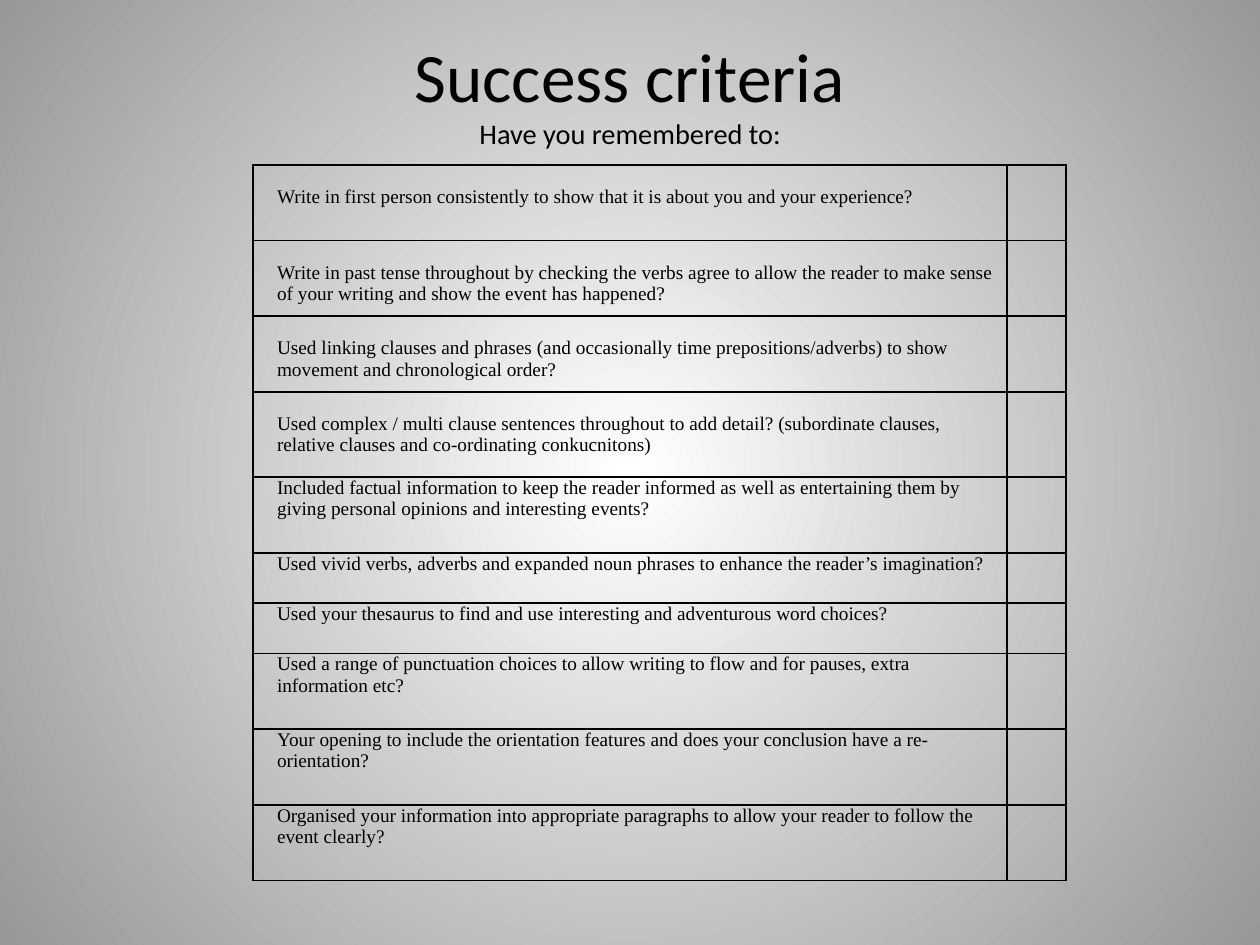
from lxml import etree
from pptx import Presentation
from pptx.dml.color import RGBColor
from pptx.enum import text
from pptx.oxml.ns import qn
from pptx.util import Pt

BLACK = "000000"
LINE = 12.2  # height of one line of table text
TALL, SHORT = 43.2, 28.8

# Wording, row height, space above the text
CRITERIA = [
    ("Write in first person consistently to show that it is about you and your experience?", TALL, LINE),
    ("Write in past tense throughout by checking the verbs agree to allow the reader to make sense "
     "of your writing and show the event has happened?", TALL, LINE),
    ("Used linking clauses and phrases (and occasionally time prepositions/adverbs) to show "
     "movement and chronological order?", TALL, LINE),
    ("Used complex / multi clause sentences throughout to add detail? (subordinate clauses, "
     "relative clauses and co-ordinating conkucnitons)", 4 * LINE, LINE),
    ("Included factual information to keep the reader informed as well as entertaining them by "
     "giving personal opinions and interesting events?", TALL, 0),
    ("Used vivid verbs, adverbs and expanded noun phrases to enhance the reader’s imagination?", SHORT, 0),
    ("Used your thesaurus to find and use interesting and adventurous word choices?", SHORT, 0),
    ("Used a range of punctuation choices to allow writing to flow and for pauses, extra "
     "information etc?", TALL, 0),
    ("Your opening to include the orientation features and does your conclusion have a "
     "re-orientation?", TALL, 0),
    ("Organised your information into appropriate paragraphs to allow your reader to follow the "
     "event clearly?", TALL, 0),
]
COLUMNS = (430.9, 33.8)


def color(value):
    return RGBColor.from_string(value)


def set_background(page, center, edge):
    """Fill the page with a gradient that spreads in circles from its middle."""
    fill = page.background.fill
    fill.gradient()
    for stop, value in zip(fill.gradient_stops, (center, edge)):
        stop.color.rgb = color(value)
    linear = next(page.element.iter(qn("a:lin")))
    circle = etree.Element(qn("a:path"), path="circle")
    etree.SubElement(circle, qn("a:fillToRect"), dict.fromkeys("ltrb", "50000"))
    linear.getparent().replace(linear, circle)


def add_heading(page, title, subtitle):
    box = page.shapes.add_textbox(Pt(36), Pt(21.6), Pt(648), Pt(61.2))
    frame = box.text_frame
    frame.word_wrap = True
    frame.vertical_anchor = text.MSO_ANCHOR.MIDDLE
    para = frame.paragraphs[0]
    para.alignment = text.PP_ALIGN.CENTER
    para.font.name = "Calibri"
    para.font.color.rgb = color(BLACK)
    for words, size in ((title, 39.6), (subtitle, 16.2)):
        if para.runs:
            para.add_line_break()
        span = para.add_run()
        span.text = words
        span.font.size = Pt(size)


def add_borders(cell, value, width):
    properties = cell._tc.get_or_add_tcPr()
    for index, side in enumerate(("lnL", "lnR", "lnT", "lnB")):
        line = etree.Element(qn(f"a:{side}"), w=str(Pt(width)))
        solid = etree.SubElement(line, qn("a:solidFill"))
        etree.SubElement(solid, qn("a:srgbClr"), val=value)
        properties.insert(index, line)


def fill_cell(cell, words, above):
    cell.fill.background()
    cell.margin_left = cell.margin_right = Pt(5)
    cell.margin_top, cell.margin_bottom = Pt(above), 0
    cell.text = words
    para = cell.text_frame.paragraphs[0]
    para.font.name = "Times New Roman"
    para.font.size = Pt(11)
    para.font.color.rgb = color(BLACK)
    para._p.get_or_add_pPr().set("marL", str(Pt(8.7)))
    add_borders(cell, BLACK, 1)


def add_checklist(page, left, top):
    height = sum(row[1] for row in CRITERIA)
    table = page.shapes.add_table(len(CRITERIA), len(COLUMNS), Pt(left), Pt(top),
                                  Pt(sum(COLUMNS)), Pt(height)).table
    table.first_row = table.horz_banding = False
    for column, width in zip(table.columns, COLUMNS):
        column.width = Pt(width)
    for row, (words, row_height, above) in zip(table.rows, CRITERIA):
        row.height = Pt(row_height)
        fill_cell(row.cells[0], words, above)
        fill_cell(row.cells[1], "", 0)


def main():
    deck = Presentation()
    deck.slide_width, deck.slide_height = Pt(720), Pt(540)
    page = deck.slides.add_slide(deck.slide_layouts[6])
    set_background(page, "FFFFFF", "979797")
    add_heading(page, "Success criteria", "Have you remembered to:")
    add_checklist(page, 144.6, 94.3)
    deck.save("out.pptx")


if __name__ == "__main__":
    main()
